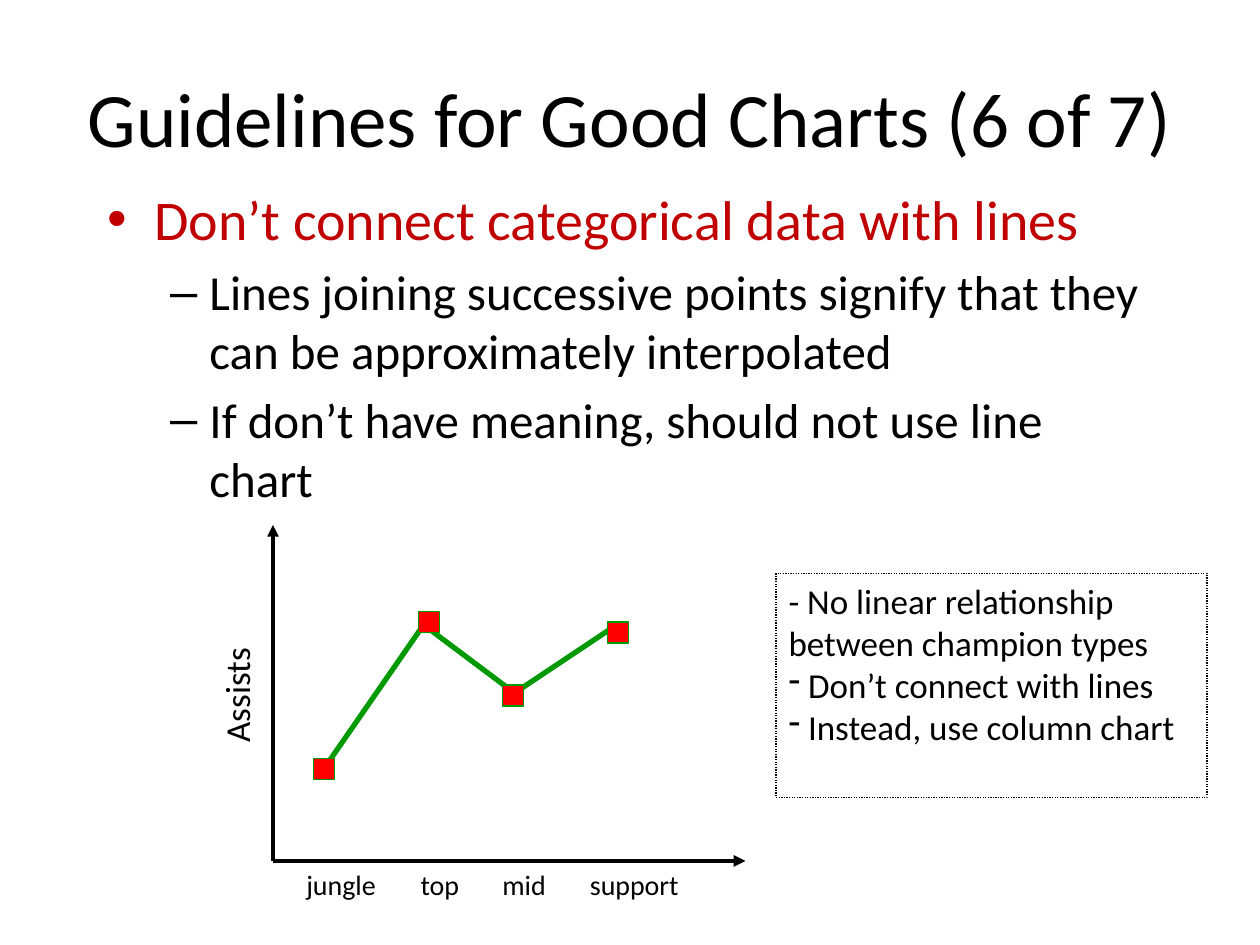
import pptx
import pptx.util
import pptx.dml.color
import pptx.enum.dml
import pptx.enum.shapes
import pptx.enum.text
import pptx.oxml.ns
import lxml.etree

Pt = pptx.util.Pt
RGBColor = pptx.dml.color.RGBColor
MSO_SHAPE = pptx.enum.shapes.MSO_SHAPE
PP_ALIGN = pptx.enum.text.PP_ALIGN
MSO_ANCHOR = pptx.enum.text.MSO_ANCHOR
qn = pptx.oxml.ns.qn

BLACK = RGBColor(0x00, 0x00, 0x00)
CRIMSON = RGBColor(0xC0, 0x00, 0x00)
RED = RGBColor(0xFF, 0x00, 0x00)
GREEN = RGBColor(0x00, 0x99, 0x00)
FONT = "Calibri"

TITLE = "Guidelines for Good Charts (6 of 7)"
BODY = [
    {"text": "Don’t connect categorical data with lines", "size": 32, "color": CRIMSON},
    {"text": "Lines joining successive points signify that they can be approximately interpolated",
     "size": 28, "level": 1},
    {"text": "If don’t have meaning, should not use line chart", "size": 28, "level": 1},
]
NOTE = [
    {"text": "- No linear relationship between champion types"},
    {"text": " Don’t connect with lines", "bullet": "-"},
    {"text": " Instead, use column chart", "bullet": "-"},
]
Y_LABEL = "Assists"
X_LABELS = [("jungle", 168, 55), ("top", 233.3, 37), ("mid", 280, 40), ("support", 330, 66)]
ORIGIN = (156, 492)
AXIS_ENDS = [(156, 300), (426, 492)]
SEGMENTS = [((186, 438), (240, 360)), ((246, 360), (294, 396)), ((294, 396), (348, 360))]
MARKERS = [(179.3, 433.4), (239.3, 349.4), (287.3, 391.4), (347.3, 355.4)]
MARKER_SIZE = 12


def add_text(tf, text, size=20, color=BLACK, level=0, bullet=None, align=None):
    p = tf.paragraphs[0]
    if p.runs:
        p = tf.add_paragraph()
    p.level = level
    if align is not None:
        p.alignment = align
    if bullet:
        lxml.etree.SubElement(p._p.get_or_add_pPr(), qn("a:buChar"), char=bullet)
    r = p.add_run()
    r.text = text
    r.font.name = FONT
    r.font.size = Pt(size)
    r.font.color.rgb = color


def place(sp, left, top, width, height):
    sp.left, sp.top, sp.width, sp.height = Pt(left), Pt(top), Pt(width), Pt(height)


def add_label(shapes, text, left, top, width, height, size):
    sp = shapes.add_textbox(Pt(left), Pt(top), Pt(width), Pt(height))
    sp.text_frame.word_wrap = False
    add_text(sp.text_frame, text, size=size)
    return sp


def add_line(shapes, start, end, color, width, arrow=False):
    line = shapes.add_connector(pptx.enum.shapes.MSO_CONNECTOR.STRAIGHT,
                                *(Pt(v) for v in start + end))
    line.line.color.rgb = color
    line.line.width = Pt(width)
    if arrow:
        lxml.etree.SubElement(line.line._get_or_add_ln(), qn("a:tailEnd"), type="triangle")
    lxml.etree.SubElement(line._element.spPr, qn("a:effectLst"))


def add_rect(shapes, left, top, width, height, line_color, fill=None):
    sp = shapes.add_shape(MSO_SHAPE.RECTANGLE, Pt(left), Pt(top), Pt(width), Pt(height))
    sp.shadow.inherit = False
    if fill is None:
        sp.fill.background()
    else:
        sp.fill.solid()
        sp.fill.fore_color.rgb = fill
    sp.line.color.rgb = line_color
    sp.line.width = Pt(0.75)
    return sp


def main():
    prs = pptx.Presentation()
    prs.slide_width, prs.slide_height = Pt(720), Pt(540)
    s = prs.slides.add_slide(prs.slide_layouts[1])

    title, body = s.placeholders
    place(title, 36, 21.6, 648, 90)
    title.text_frame.vertical_anchor = MSO_ANCHOR.MIDDLE
    add_text(title.text_frame, TITLE, size=44, align=PP_ALIGN.CENTER)
    place(body, 54, 102, 612, 192)
    for item in BODY:
        add_text(body.text_frame, **item)

    chart = s.shapes.add_group_shape().shapes
    for end in AXIS_ENDS:
        add_line(chart, ORIGIN, end, BLACK, 2.25, arrow=True)
    for start, end in SEGMENTS:
        add_line(chart, start, end, GREEN, 3)
    for text, left, width in X_LABELS:
        add_label(chart, text, left, ORIGIN[1], width, 26.6, 16)
    add_label(chart, Y_LABEL, 100.8, 380.9, 69, 31.7, 20).rotation = 270
    for left, top in MARKERS:
        add_rect(chart, left, top, MARKER_SIZE, MARKER_SIZE, GREEN, fill=RED)

    note = add_rect(s.shapes, 443.5, 327.6, 246.2, 128.2, BLACK)
    note.line.dash_style = pptx.enum.dml.MSO_LINE.ROUND_DOT
    note.text_frame.word_wrap = True
    note.text_frame.vertical_anchor = MSO_ANCHOR.TOP
    for item in NOTE:
        add_text(note.text_frame, align=PP_ALIGN.LEFT, **item)

    prs.save("out.pptx")


if __name__ == "__main__":
    main()
